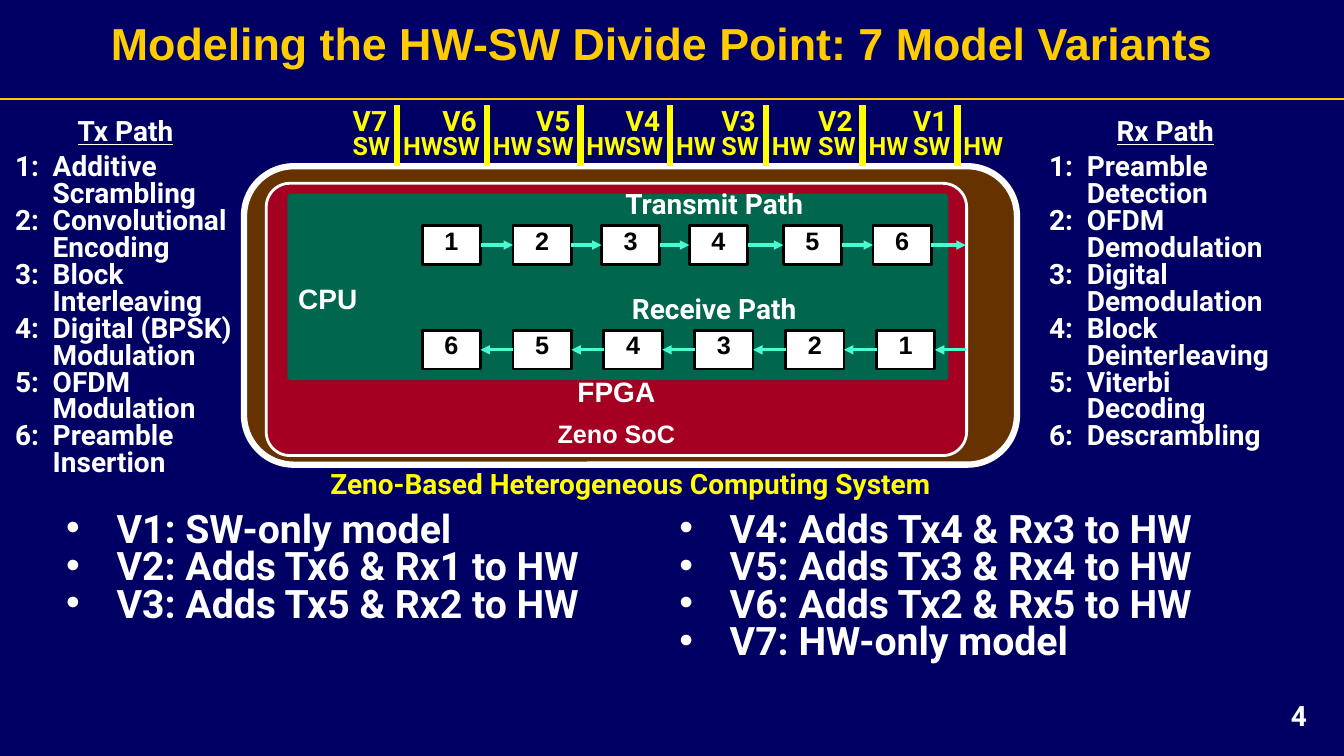
import pptx
import pptx.util
import pptx.dml.color
import pptx.enum.shapes
import pptx.enum.text
import pptx.oxml
import pptx.oxml.ns
from lxml import etree

Cm, Pt = pptx.util.Cm, pptx.util.Pt
SHAPE = pptx.enum.shapes.MSO_SHAPE
ALIGN = pptx.enum.text.PP_ALIGN
ANCHOR = pptx.enum.text.MSO_ANCHOR
qn = pptx.oxml.ns.qn

# Content
TITLE = "Modeling the HW-SW Divide Point: 7 Model Variants"
PAGE_NUMBER = "4"
SYSTEM = "Zeno-Based Heterogeneous Computing System"
FABRIC = [("FPGA", 20), ("Zeno SoC", 18)]
PATH_LISTS = [  # heading, left, width, steps
    ("Tx Path", 0.13, 6.07,
     ["Additive Scrambling", "Convolutional Encoding", "Block Interleaving",
      "Digital (BPSK) Modulation", "OFDM Modulation", "Preamble Insertion"]),
    ("Rx Path", 26.19, 6.35,
     ["Preamble Detection", "OFDM Demodulation", "Digital Demodulation",
      "Block Deinterleaving", "Viterbi Decoding", "Descrambling"]),
]
VARIANTS = [  # left, lines
    (1.42, ["V1: SW-only model", "V2: Adds Tx6 & Rx1 to HW",
            "V3: Adds Tx5 & Rx2 to HW"]),
    (16.87, ["V4: Adds Tx4 & Rx3 to HW", "V5: Adds Tx3 & Rx4 to HW",
             "V6: Adds Tx2 & Rx5 to HW", "V7: HW-only model"]),
]
DIVIDERS = {"V7": 10.01, "V6": 12.27, "V5": 14.63, "V4": 16.89,
            "V3": 19.3, "V2": 21.74, "V1": 24.13}
CHAIN_END = 24.34
CHAINS = [  # label, label top, box top, box lefts in the order of the data
    ("Transmit Path", 4.75, 5.69, [10.64, 12.93, 15.16, 17.37, 19.74, 22]),
    ("Receive Path", 7.39, 8.33, [10.64 + 2.29 * i for i in range(5, -1, -1)]),
]
BOX_W, BOX_H = 1.47, 0.97
COLORS = {"back": "000064", "gold": "FFCC00", "white": "FFFFFF",
          "black": "000000", "yellow": "FFFF00", "brown": "663300",
          "red": "A50021", "green": "00664D", "mint": "47FFD1"}


def rgb(name):
    return pptx.dml.color.RGBColor.from_string(COLORS[name])


def style(p, size, color="white", font="Roboto", align=ALIGN.LEFT, spacing=0.8):
    p.alignment = align
    p.line_spacing = spacing
    for r in p.runs:
        r.font.size, r.font.name, r.font.bold = Pt(size), font, True
        r.font.color.rgb = rgb(color)


def hang(p, indent, bullet=None):
    pPr = p._p.get_or_add_pPr()
    pPr.set("marL", str(Cm(indent)))
    pPr.set("indent", str(-Cm(indent)))
    if bullet:
        etree.SubElement(pPr, qn("a:buFont")).set("typeface", "Arial")
        etree.SubElement(pPr, qn("a:buChar")).set("char", bullet)


def add_text(s, box, lines, size, color="white", align=ALIGN.LEFT):
    tf = s.shapes.add_textbox(*map(Cm, box)).text_frame
    tf.word_wrap = True
    tf.text = "\n".join(lines)
    for p in tf.paragraphs:
        style(p, size, color, align=align)
    return tf


def add_block(s, kind, box, fill, line=None, width=0, adj=None):
    sp = s.shapes.add_shape(kind, *map(Cm, box))
    sp.shadow.inherit = False
    sp.fill.solid()
    sp.fill.fore_color.rgb = rgb(fill)
    if line:
        sp.line.color.rgb = rgb(line)
        sp.line.width = Pt(width)
    else:
        sp.line.fill.background()
    if adj is not None:
        sp.adjustments[0] = adj
    return sp


def add_line(s, x1, y1, x2, y2, color, width, arrow=False):
    c = s.shapes.add_connector(pptx.enum.shapes.MSO_CONNECTOR.STRAIGHT,
                               Cm(x1), Cm(y1), Cm(x2), Cm(y2))
    c.line.color.rgb = rgb(color)
    c.line.width = Pt(width)
    if arrow:
        etree.SubElement(c.line._get_or_add_ln(), qn("a:tailEnd")).set("type", "triangle")
    etree.SubElement(c._element.spPr, qn("a:effectLst"))
    return c


def add_title(s):
    sp = s.shapes.title
    sp.left, sp.top, sp.width, sp.height = map(Cm, (2.54, 0.1, 31.32, 2.16))
    tf = sp.text_frame
    tf.text = TITLE
    tf.auto_size = pptx.enum.text.MSO_AUTO_SIZE.NONE
    tf.vertical_anchor = ANCHOR.MIDDLE
    p = tf.paragraphs[0]
    style(p, 32, "gold", "Arial", spacing=0.85)
    shadow = pptx.oxml.parse_xml(
        '<a:effectLst xmlns:a="http://schemas.openxmlformats.org/drawingml/2006/main">'
        '<a:outerShdw dist="38100" dir="2700000"><a:srgbClr val="000000"/>'
        '</a:outerShdw></a:effectLst>')
    p.runs[0]._r.get_or_add_rPr().find(qn("a:solidFill")).addnext(shadow)


def add_system(s):
    add_block(s, SHAPE.ROUNDED_RECTANGLE, (6.15, 4.19, 19.48, 7.52), "brown", "white", 4.5)

    sp = add_block(s, SHAPE.ROUNDED_RECTANGLE, (6.71, 4.62, 17.65, 6.86),
                   "red", "white", 2, 0.087)
    tf = sp.text_frame
    tf.vertical_anchor = ANCHOR.BOTTOM
    tf.margin_bottom = 0
    tf.text = "\n".join(name for name, size in FABRIC)
    for p, (name, size) in zip(tf.paragraphs, FABRIC):
        style(p, size, font="Arial", align=ALIGN.CENTER)
    tf.paragraphs[0].space_after = Pt(12)

    sp = add_block(s, SHAPE.ROUNDED_RECTANGLE, (7.24, 4.88, 16.66, 4.7), "green", adj=0.02)
    tf = sp.text_frame
    tf.vertical_anchor = ANCHOR.MIDDLE
    tf.margin_top = Cm(0.86)
    tf.text = "CPU"
    style(tf.paragraphs[0], 20, font="Arial")


def add_chain(s, label, label_top, top, lefts):
    add_text(s, (12.1, label_top, 11.8, 0.94), [label], 20, align=ALIGN.CENTER)
    boxes = []
    for n, left in enumerate(lefts, 1):
        sp = add_block(s, SHAPE.RECTANGLE, (left, top, BOX_W, BOX_H), "white", "black", 2)
        tf = sp.text_frame
        tf.vertical_anchor = ANCHOR.TOP
        tf.text = str(n)
        style(tf.paragraphs[0], 18, "black", "Arial", ALIGN.CENTER)
        boxes.append(sp)

    mid = top + BOX_H / 2
    rightward = lefts[0] < lefts[-1]
    out_side, in_side = (3, 1) if rightward else (1, 3)
    for a, b in zip(boxes, boxes[1:]):
        c = add_line(s, 0, mid, 1, mid, "mint", 2.25, arrow=True)
        c.begin_connect(a, out_side)
        c.end_connect(b, in_side)
    # Link between the chain and the edge of the fabric
    edge = max(lefts) + BOX_W
    if rightward:
        add_line(s, edge, mid, CHAIN_END, mid, "mint", 2.25, True).begin_connect(boxes[-1], 3)
    else:
        add_line(s, CHAIN_END, mid, edge, mid, "mint", 2.25, True).end_connect(boxes[0], 3)


def add_divider(s, name, x):
    tf = add_text(s, (x - 1.37, 2.64, 2.84, 1.55), [name, "SW\tHW"], 20, "yellow")
    p = tf.paragraphs[1]
    p.runs[0].font.size = Pt(18)
    tabs = etree.SubElement(p._p.get_or_add_pPr(), qn("a:tabLst"))
    tab = etree.SubElement(tabs, qn("a:tab"))
    tab.set("pos", str(Cm(1.27)))
    tab.set("algn", "l")
    add_line(s, x, 2.64, x, 4.18, "yellow", 4.5)


def main():
    prs = pptx.Presentation()
    prs.slide_width, prs.slide_height = Cm(33.87), Cm(19.05)
    s = prs.slides.add_slide(prs.slide_layouts[5])
    s.background.fill.solid()
    s.background.fill.fore_color.rgb = rgb("back")

    # Header and page number
    add_title(s)
    add_line(s, 0, 2.49, 33.87, 2.49, "gold", 1.5)
    add_text(s, (31.95, 17.63, 1.57, 1.02), [PAGE_NUMBER], 20, align=ALIGN.CENTER)

    # Diagram
    add_system(s)
    for chain in CHAINS:
        add_chain(s, *chain)
    for name, x in DIVIDERS.items():
        add_divider(s, name, x)
    add_text(s, (6.15, 11.79, 19.48, 0.94), [SYSTEM], 20, "yellow", ALIGN.CENTER)

    # Numbered steps on both sides
    for heading, left, width, steps in PATH_LISTS:
        lines = [heading] + [f"{n}:\t{step}" for n, step in enumerate(steps, 1)]
        head, *items = add_text(s, (left, 2.9, width, 9.37), lines, 20).paragraphs
        head.alignment = ALIGN.CENTER
        head.space_after = Pt(6)
        head.runs[0].font.underline = True
        for p in items:
            hang(p, 0.95)

    # Variants in two columns
    for left, lines in VARIANTS:
        for p in add_text(s, (left, 12.8, 15.3, 4.22), lines, 28).paragraphs:
            hang(p, 1.27, "•")

    prs.save("out.pptx")


if __name__ == "__main__":
    main()
